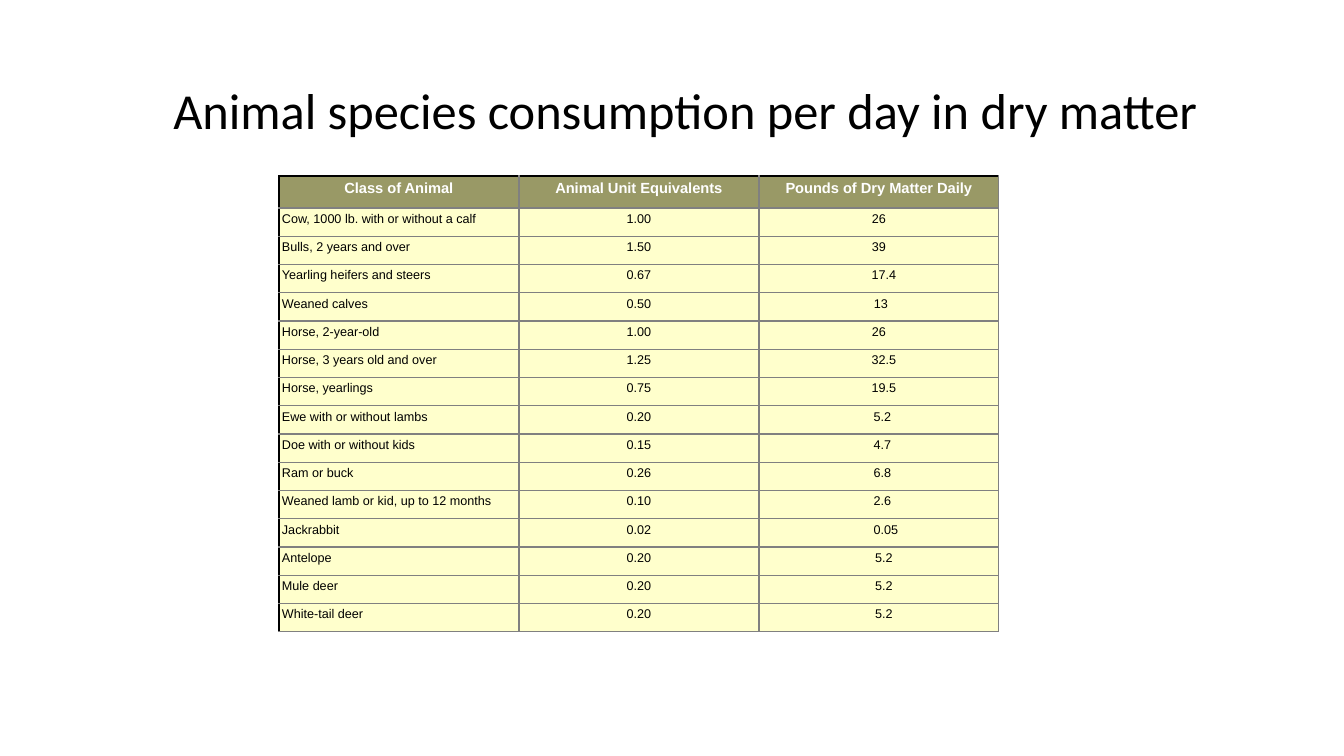
from lxml.etree import SubElement
from pptx import Presentation
from pptx.dml.color import RGBColor
from pptx.enum.text import MSO_ANCHOR, PP_ALIGN
from pptx.oxml.ns import qn
from pptx.util import Emu, Pt

BLACK = RGBColor(0x00, 0x00, 0x00)
WHITE = RGBColor(0xFF, 0xFF, 0xFF)
GRAY = RGBColor(0x80, 0x80, 0x80)
OLIVE = RGBColor(0x99, 0x99, 0x66)
CREAM = RGBColor(0xFF, 0xFF, 0xCC)

HEADERS = ["Class of Animal", "Animal Unit Equivalents", "Pounds of Dry Matter Daily"]
# Animal class, unit equivalent, daily pounds, extra left inset of the pounds in px
ANIMALS = [
    ("Cow, 1000 lb. with or without a calf", "1.00", "26", 0),
    ("Bulls, 2 years and over", "1.50", "39", 0),
    ("Yearling heifers and steers", "0.67", "17.4", 10),
    ("Weaned calves", "0.50", "13", 4),
    ("Horse, 2-year-old", "1.00", "26", 0),
    ("Horse, 3 years old and over", "1.25", "32.5", 10),
    ("Horse, yearlings", "0.75", "19.5", 10),
    ("Ewe with or without lambs", "0.20", "5.2", 7),
    ("Doe with or without kids", "0.15", "4.7", 7),
    ("Ram or buck", "0.26", "6.8", 7),
    ("Weaned lamb or kid, up to 12 months", "0.10", "2.6", 7),
    ("Jackrabbit", "0.02", "0.05", 14),
    ("Antelope", "0.20", "5.2", 10),
    ("Mule deer", "0.20", "5.2", 10),
    ("White-tail deer", "0.20", "5.2", 10),
]
HEADER_HEIGHT, BODY_HEIGHT, COLUMN_WIDTH, INSET = 32, 424, 240, 3


def px(length):
    return Emu(round(length * 914400 / 100.8))


def add_border(cell, side, color):
    line = SubElement(cell._tc.get_or_add_tcPr(), qn(f"a:ln{side}"), w=str(Pt(1)))
    fill = SubElement(line, qn("a:solidFill"))
    SubElement(fill, qn("a:srgbClr"), val=str(color))


presentation = Presentation()
presentation.slide_width = px(1344)
presentation.slide_height = px(756)
slide = presentation.slides.add_slide(presentation.slide_layouts[5])

# Title
title = slide.shapes.title
title.left, title.top, title.width, title.height = px(106), px(40), px(1159), px(146)
title.text_frame.text = "Animal species consumption per day in dry matter"
title.text_frame.vertical_anchor = MSO_ANCHOR.MIDDLE
paragraph = title.text_frame.paragraphs[0]
paragraph.alignment = PP_ALIGN.CENTER
paragraph.line_spacing = 0.9
paragraph.font.name = "Calibri"
paragraph.font.size = Pt(36)
paragraph.font.color.rgb = BLACK

# Table grid
rows = [(*HEADERS, 0), *ANIMALS]
table = slide.shapes.add_table(
    len(rows), len(HEADERS), px(279), px(176),
    px(COLUMN_WIDTH * len(HEADERS)), px(HEADER_HEIGHT + BODY_HEIGHT),
).table
table.horz_banding = False
for column in table.columns:
    column.width = px(COLUMN_WIDTH)
for row in table.rows:
    row.height = px(BODY_HEIGHT / len(ANIMALS))
table.rows[0].height = px(HEADER_HEIGHT)

# Table cells
for row_index, (*texts, pounds_shift) in enumerate(rows):
    is_header = row_index == 0
    for column_index, text in enumerate(texts):
        cell = table.cell(row_index, column_index)
        cell.margin_left = cell.margin_right = px(INSET)
        cell.margin_top = cell.margin_bottom = px(INSET)
        if column_index == 2:
            cell.margin_left = px(INSET + pounds_shift)
        add_border(cell, "L", BLACK if column_index == 0 else GRAY)
        add_border(cell, "R", GRAY)
        add_border(cell, "T", BLACK if is_header else GRAY)
        add_border(cell, "B", GRAY)
        cell.fill.solid()
        cell.fill.fore_color.rgb = OLIVE if is_header else CREAM

        cell.text = text
        paragraph = cell.text_frame.paragraphs[0]
        is_centered = is_header or column_index > 0
        paragraph.alignment = PP_ALIGN.CENTER if is_centered else PP_ALIGN.LEFT
        paragraph.line_spacing = 1.07
        paragraph.font.name = "Arial"
        paragraph.font.size = Pt(10.5 if is_header else 9)
        paragraph.font.bold = is_header
        paragraph.font.color.rgb = WHITE if is_header else BLACK

presentation.save("out.pptx")
